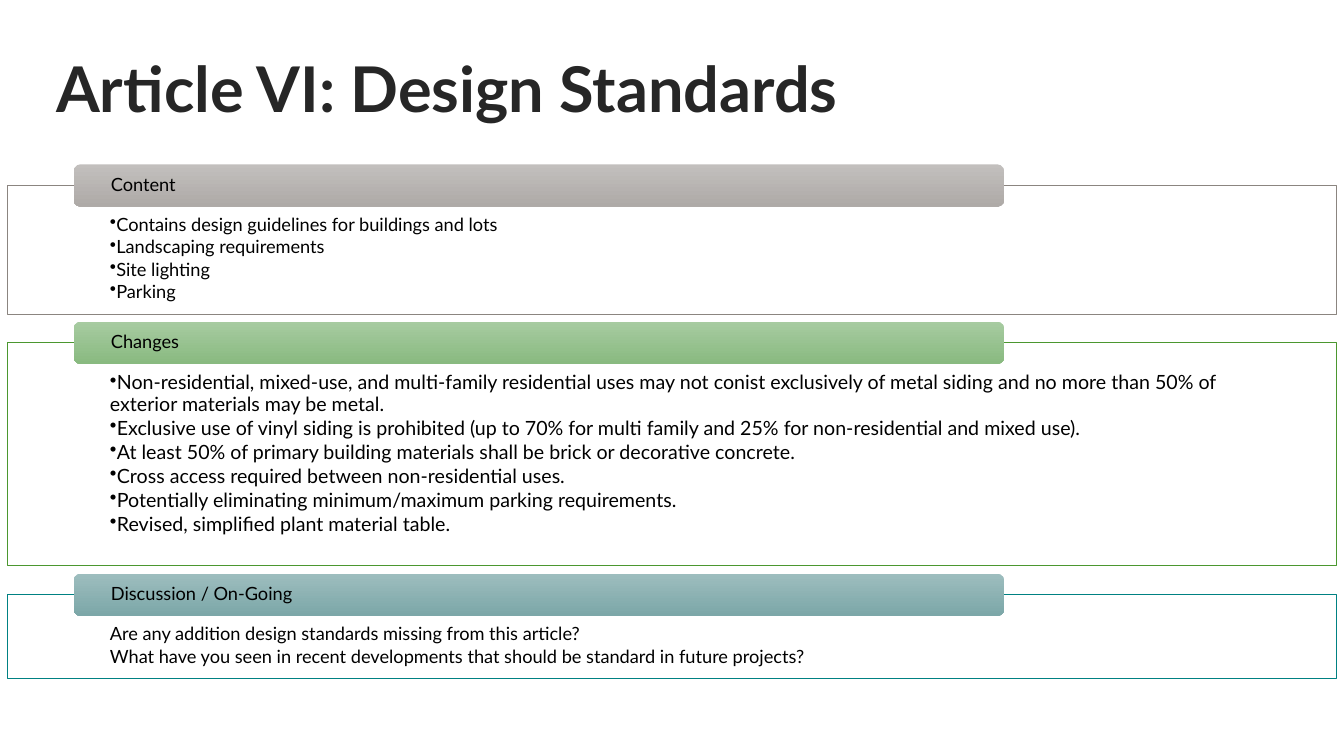
from lxml import etree
from pptx import Presentation
from pptx.dml.color import RGBColor
from pptx.enum import shapes, text
from pptx.oxml import ns
from pptx.util import Inches, Pt

FONT = "Lato"
BLACK = RGBColor(0x00, 0x00, 0x00)
WHITE = RGBColor(0xFF, 0xFF, 0xFF)
TITLE_GRAY = RGBColor(0x26, 0x26, 0x26)
GRAY = (RGBColor(0x8B, 0x85, 0x80), RGBColor(0xC2, 0xBF, 0xBD), RGBColor(0xAE, 0xAA, 0xA7))
GREEN = (RGBColor(0x4B, 0x97, 0x2F), RGBColor(0xA7, 0xCB, 0xA1), RGBColor(0x89, 0xBA, 0x80))
TEAL = (RGBColor(0x00, 0x81, 0x82), RGBColor(0x9D, 0xBD, 0xBE), RGBColor(0x7C, 0xA7, 0xA8))

LEFT, WIDTH = 0.07, 13.18
BAR_INDENT, BAR_WIDTH, BAR_HEIGHT, BAR_RISE = 0.66, 9.23, 0.42, 0.21

# heading, (outline, bar top, bar bottom), box top, box height, text size, bulleted, lines
SECTIONS = [
    ("Content", GRAY, 1.84, 1.28, 13, True, [
        "Contains design guidelines for buildings and lots",
        "Landscaping requirements",
        "Site lighting",
        "Parking",
    ]),
    ("Changes", GREEN, 3.4, 2.21, 14, True, [
        "Non-residential, mixed-use, and multi-family residential uses may not conist "
        "exclusively of metal siding and no more than 50% of exterior materials may be metal.",
        "Exclusive use of vinyl siding is prohibited (up to 70% for multi family and 25% "
        "for non-residential and mixed use).",
        "At least 50% of primary building materials shall be brick or decorative concrete.",
        "Cross access required between non-residential uses.",
        "Potentially eliminating minimum/maximum parking requirements.",
        "Revised, simplified plant material table.",
    ]),
    ("Discussion / On-Going", TEAL, 5.9, 0.83, 13, False, [
        "Are any addition design standards missing from this article?",
        "What have you seen in recent developments that should be standard in future projects?",
    ]),
]


def set_frame(tf, anchor, left, top, right, bottom):
    tf.word_wrap = True
    tf.vertical_anchor = anchor
    tf.margin_left, tf.margin_top = Inches(left), Inches(top)
    tf.margin_right, tf.margin_bottom = Inches(right), Inches(bottom)


def write_lines(tf, lines, size, color=BLACK, bold=False, bulleted=False):
    for i, line in enumerate(lines):
        p = tf.paragraphs[0] if i == 0 else tf.add_paragraph()
        if bulleted:
            pPr = p._p.get_or_add_pPr()
            pPr.set("marL", "0")
            pPr.set("indent", "0")
            etree.SubElement(pPr, ns.qn("a:buChar")).set("char", "•")
        p.alignment = text.PP_ALIGN.LEFT
        p.line_spacing = 0.9
        p.space_after = Pt(round(size * 0.15, 1))
        r = p.add_run()
        r.text = line
        r.font.name = FONT
        r.font.size = Pt(size)
        r.font.bold = bold
        r.font.color.rgb = color


def add_box(slide, kind, left, top, width, height):
    sp = slide.shapes.add_shape(kind, Inches(left), Inches(top), Inches(width), Inches(height))
    sp.shadow.inherit = False
    return sp


def add_title(slide, left, top, width, height):
    sp = slide.shapes.add_textbox(Inches(left), Inches(top), Inches(width), Inches(height))
    set_frame(sp.text_frame, text.MSO_ANCHOR.MIDDLE, 0.1, 0.05, 0.1, 0.05)
    write_lines(sp.text_frame, ["Article VI: Design Standards"], 45, TITLE_GRAY, bold=True)


def add_section(slide, heading, colors, top, height, size, bulleted, lines):
    """Outlined box of lines with a heading bar straddling its top edge."""
    outline, bar_top, bar_bottom = colors

    box = add_box(slide, shapes.MSO_SHAPE.RECTANGLE, LEFT, top, WIDTH, height)
    box.fill.solid()
    box.fill.fore_color.rgb = WHITE
    box.line.color.rgb = outline
    box.line.width = Pt(0.5)
    set_frame(box.text_frame, text.MSO_ANCHOR.TOP, 1.02, 0.3, 1.02, 0.1)
    write_lines(box.text_frame, lines, size, bulleted=bulleted)

    bar = add_box(slide, shapes.MSO_SHAPE.ROUNDED_RECTANGLE, LEFT + BAR_INDENT,
                  top - BAR_RISE, BAR_WIDTH, BAR_HEIGHT)
    bar.fill.gradient()
    bar.fill.gradient_angle = 270
    for stop, color in zip(bar.fill.gradient_stops, (bar_top, bar_bottom)):
        stop.color.rgb = color
    bar.line.fill.background()
    set_frame(bar.text_frame, text.MSO_ANCHOR.MIDDLE, 0.35, 0, 0.35, 0)
    write_lines(bar.text_frame, [heading], 13)


def main():
    prs = Presentation()
    prs.slide_width, prs.slide_height = Inches(13.33), Inches(7.5)
    slide = prs.slides.add_slide(prs.slide_layouts[6])
    add_title(slide, 0.46, 0.36, 11.68, 1.1)
    for section in SECTIONS:
        add_section(slide, *section)
    prs.save("out.pptx")


if __name__ == "__main__":
    main()
